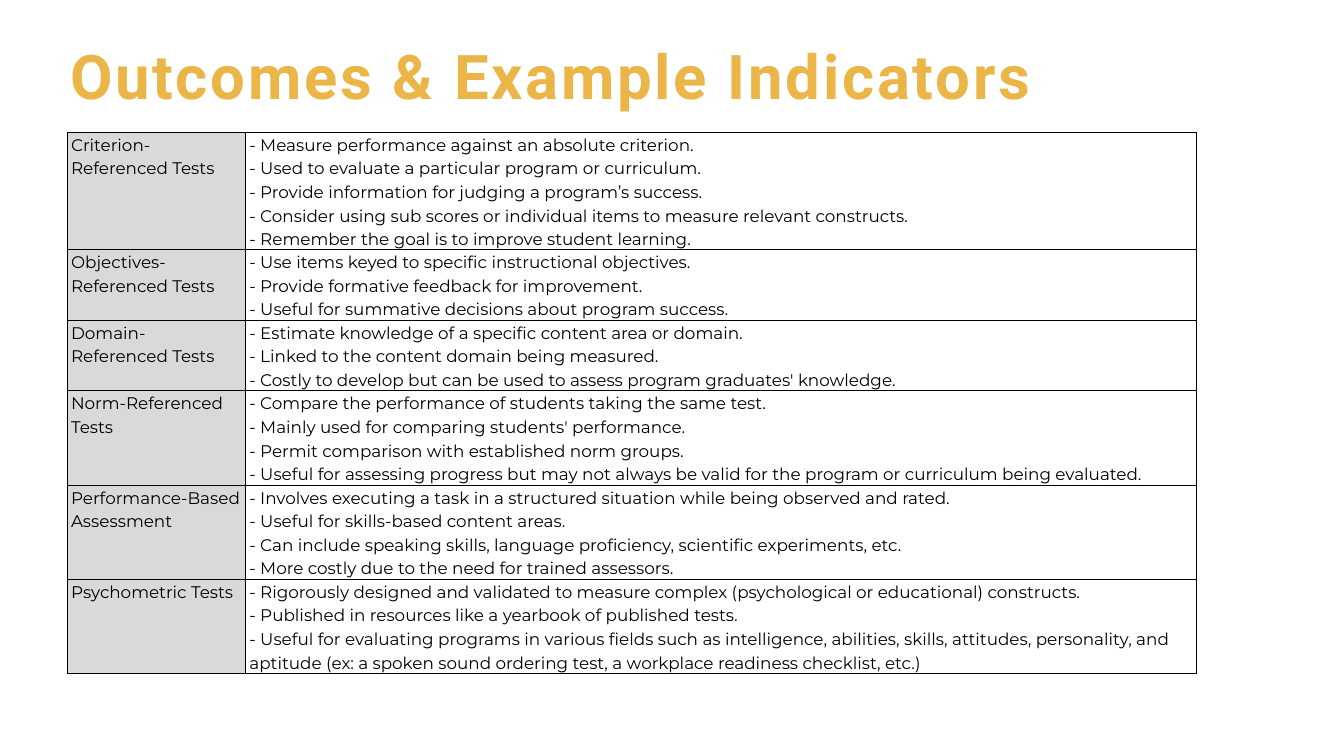
from lxml.etree import SubElement
from pptx import Presentation
from pptx.dml.color import RGBColor
from pptx.enum.text import MSO_ANCHOR
from pptx.oxml.ns import qn
from pptx.util import Pt

PX = 9144  # 100 px to the inch
GOLD = RGBColor(0xEC, 0xB5, 0x47)
BLACK = RGBColor(0x00, 0x00, 0x00)
GREY = RGBColor(0xD9, 0xD9, 0xD9)

LINE_HEIGHT = 46.75
COLUMN_WIDTHS = (354, 1887)

# Test type, lines shown in the row, indicators
OUTCOMES = [
    ("Criterion-Referenced Tests", 5, [
        "Measure performance against an absolute criterion.",
        "Used to evaluate a particular program or curriculum.",
        "Provide information for judging a program’s success.",
        "Consider using sub scores or individual items to measure relevant constructs.",
        "Remember the goal is to improve student learning.",
    ]),
    ("Objectives-Referenced Tests", 3, [
        "Use items keyed to specific instructional objectives.",
        "Provide formative feedback for improvement.",
        "Useful for summative decisions about program success.",
    ]),
    ("Domain-Referenced Tests", 3, [
        "Estimate knowledge of a specific content area or domain.",
        "Linked to the content domain being measured.",
        "Costly to develop but can be used to assess program graduates' knowledge.",
    ]),
    ("Norm-Referenced Tests", 4, [
        "Compare the performance of students taking the same test.",
        "Mainly used for comparing students' performance.",
        "Permit comparison with established norm groups.",
        "Useful for assessing progress but may not always be valid for the program "
        "or curriculum being evaluated.",
    ]),
    ("Performance-Based Assessment", 4, [
        "Involves executing a task in a structured situation while being observed and rated.",
        "Useful for skills-based content areas.",
        "Can include speaking skills, language proficiency, scientific experiments, etc.",
        "More costly due to the need for trained assessors.",
    ]),
    ("Psychometric Tests", 4, [
        "Rigorously designed and validated to measure complex "
        "(psychological or educational) constructs.",
        "Published in resources like a yearbook of published tests.",
        "Useful for evaluating programs in various fields such as intelligence, abilities, "
        "skills, attitudes, personality, and aptitude (ex: a spoken sound ordering test, "
        "a workplace readiness checklist, etc.)",
    ]),
]


class SlideBuilder:
    """Holds the slide and the style of its title and table."""

    title_font, title_size = "Roboto", 88
    body_font, body_size = "Montserrat", 24

    def __init__(self, slide):
        self.slide = slide

    def add_run(self, paragraph, text, font, size, color, spacing):
        paragraph.line_spacing = spacing
        run = paragraph.add_run()
        run.text = text
        run.font.name = font
        run.font.size = Pt(size)
        run.font.color.rgb = color
        return run

    def title(self, text, left, top, width, height):
        box = self.slide.shapes.add_textbox(left * PX, top * PX, width * PX, height * PX)
        frame = box.text_frame
        frame.word_wrap = True
        frame.vertical_anchor = MSO_ANCHOR.TOP
        frame.margin_left = frame.margin_right = 6 * PX
        frame.margin_top = frame.margin_bottom = 6 * PX
        run = self.add_run(frame.paragraphs[0], text, self.title_font,
                           self.title_size, GOLD, 0.8)
        run.font.bold = True
        run.font._element.set("spc", "400")

    def border(self, cell):
        properties = cell._tc.get_or_add_tcPr()
        for position, side in enumerate(("lnL", "lnR", "lnT", "lnB")):
            line = SubElement(properties, qn(f"a:{side}"), w=str(Pt(1)))
            fill = SubElement(line, qn("a:solidFill"))
            SubElement(fill, qn("a:srgbClr"), val=str(BLACK))
            properties.insert(position, line)

    def cell(self, cell, lines, fill=None):
        cell.margin_left = cell.margin_right = 8 * PX
        cell.margin_top = cell.margin_bottom = 0
        if fill is None:
            cell.fill.background()
        else:
            cell.fill.solid()
            cell.fill.fore_color.rgb = fill
        self.border(cell)
        frame = cell.text_frame
        for number, line in enumerate(lines):
            paragraph = frame.add_paragraph() if number else frame.paragraphs[0]
            self.add_run(paragraph, line, self.body_font, self.body_size, BLACK, 1.15)

    def table(self, outcomes, left, top, widths):
        heights = [int(LINE_HEIGHT * count) for _, count, _ in outcomes]
        table = self.slide.shapes.add_table(
            len(outcomes), len(widths), left * PX, top * PX,
            sum(widths) * PX, sum(heights) * PX).table
        table.first_row = table.horz_banding = False
        for column, width in zip(table.columns, widths):
            column.width = width * PX
        for index, (test_type, _, indicators) in enumerate(outcomes):
            table.rows[index].height = heights[index] * PX
            self.cell(table.cell(index, 0), [test_type], GREY)
            self.cell(table.cell(index, 1), [f"- {item}" for item in indicators])


def main():
    deck = Presentation()
    deck.slide_width, deck.slide_height = 2667 * PX, 1500 * PX
    builder = SlideBuilder(deck.slides.add_slide(deck.slide_layouts[6]))

    # Heading
    builder.title("Outcomes & Example Indicators", 133, 98, 2133, 165)

    # Test types and their indicators
    builder.table(OUTCOMES, 133, 262, COLUMN_WIDTHS)

    deck.save("out.pptx")


if __name__ == "__main__":
    main()
